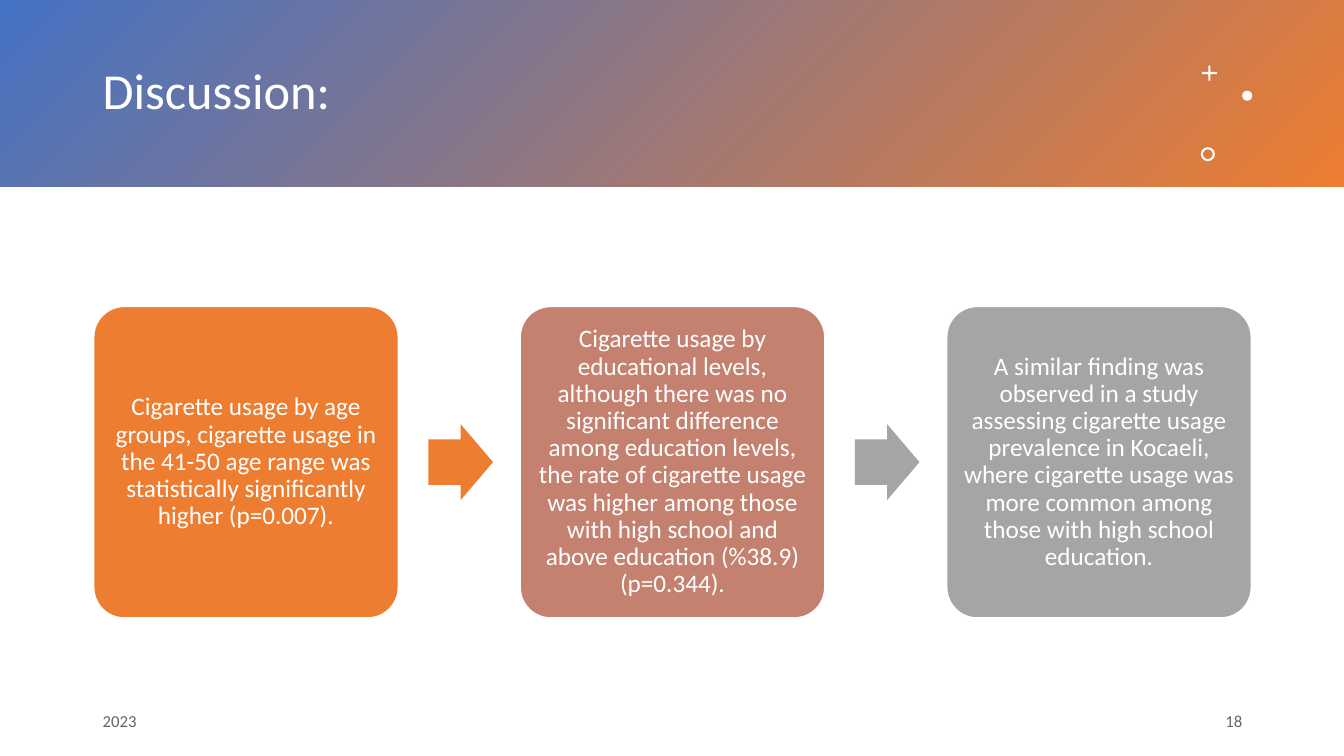
from dataclasses import dataclass

from pptx import Presentation
from pptx.dml.color import RGBColor
from pptx.enum.shapes import MSO_SHAPE
from pptx.enum.text import MSO_ANCHOR, PP_ALIGN
from pptx.util import Inches, Pt

RECTANGLE, ROUNDED = MSO_SHAPE.RECTANGLE, MSO_SHAPE.ROUNDED_RECTANGLE
ARROW, CROSS = MSO_SHAPE.RIGHT_ARROW, MSO_SHAPE.CROSS
OVAL, DONUT = MSO_SHAPE.OVAL, MSO_SHAPE.DONUT
LEFT, CENTER, RIGHT = PP_ALIGN.LEFT, PP_ALIGN.CENTER, PP_ALIGN.RIGHT
MIDDLE = MSO_ANCHOR.MIDDLE


@dataclass(frozen=True)
class Theme:
    font: str = "Calibri"
    white: str = "FFFFFF"
    blue: str = "4472C4"
    orange: str = "ED7D31"
    rose: str = "C48170"
    gray: str = "A5A5A5"
    footer: str = "666666"
    title_size: int = 36
    card_size: int = 18
    footer_size: int = 12


theme = Theme()


def add_block(kind, left, top, width, height, color, adjustments=()):
    block = page.shapes.add_shape(
        kind, Inches(left), Inches(top), Inches(width), Inches(height))
    block.shadow.inherit = False
    block.fill.solid()
    block.fill.fore_color.rgb = RGBColor.from_string(color)
    block.line.fill.background()
    for index, value in enumerate(adjustments):
        block.adjustments[index] = value
    return block


def write_text(box, text, size, color, align, spacing=1.0, margin=None):
    frame = box.text_frame
    settings = {"word_wrap": True, "vertical_anchor": MIDDLE}
    if margin is not None:
        for side in ("left", "top", "right", "bottom"):
            settings[f"margin_{side}"] = Inches(margin)
    for name, value in settings.items():
        setattr(frame, name, value)
    para = frame.paragraphs[0]
    para.alignment = align
    para.line_spacing = spacing
    span = para.add_run()
    span.text = text
    for name, value in {"name": theme.font, "size": Pt(size)}.items():
        setattr(span.font, name, value)
    span.font.color.rgb = RGBColor.from_string(color)


deck = Presentation()
deck.slide_width, deck.slide_height = Inches(13.33), Inches(7.5)
page = deck.slides.add_slide(deck.slide_layouts[6])

# Header band, blue to orange towards the lower right
band = add_block(RECTANGLE, 0, 0, 13.33, 1.85, theme.blue)
band.fill.gradient()
band.fill.gradient_angle = 315
for stop, position, color in zip(
        band.fill.gradient_stops, (0, 1), (theme.blue, theme.orange)):
    stop.position = position
    stop.color.rgb = RGBColor.from_string(color)

# Header ornaments
for kind, left, top, size, adjustments in (
        (CROSS, 11.92, 0.65, 0.15, [0.43]),
        (OVAL, 12.32, 0.9, 0.1, []),
        (DONUT, 11.91, 1.46, 0.14, [0.15])):
    add_block(kind, left, top, size, size, theme.white, adjustments)

# Title and footer
for text, left, top, width, height, size, color, align, spacing in (
        ("Discussion:", 0.92, 0.33, 10.75, 1.19,
         theme.title_size, theme.white, LEFT, 0.9),
        ("2023", 0.92, 6.95, 3, 0.4,
         theme.footer_size, theme.footer, LEFT, 1.0),
        ("18", 9.42, 6.95, 3, 0.4,
         theme.footer_size, theme.footer, RIGHT, 1.0)):
    box = page.shapes.add_textbox(
        Inches(left), Inches(top), Inches(width), Inches(height))
    write_text(box, text, size, color, align, spacing)

# Finding cards, each followed by an arrow except the last
findings = (
    ("Cigarette usage by age groups, cigarette usage in the 41-50 age range "
     "was statistically significantly higher (p=0.007).",
     theme.orange, theme.orange),
    ("Cigarette usage by educational levels, although there was no "
     "significant difference among education levels, the rate of cigarette "
     "usage was higher among those with high school and above education "
     "(%38.9) (p=0.344).",
     theme.rose, theme.gray),
    ("A similar finding was observed in a study assessing cigarette usage "
     "prevalence in Kocaeli, where cigarette usage was more common among "
     "those with high school education.",
     theme.gray, None),
)
first_left, pitch, arrow_offset = 0.93, 4.23, 3.32
for index, (text, card_color, arrow_color) in enumerate(findings):
    left = first_left + index * pitch
    card = add_block(ROUNDED, left, 3.04, 3.02, 3.09, card_color, [0.1])
    card.line.color.rgb = RGBColor.from_string(theme.white)
    card.line.width = Pt(1)
    write_text(card, text, theme.card_size, theme.white, CENTER, 0.9, 0.07)
    if arrow_color:
        add_block(ARROW, left + arrow_offset, 4.21, 0.64, 0.75,
                  arrow_color, [0.6, 0.5])

deck.save("out.pptx")
